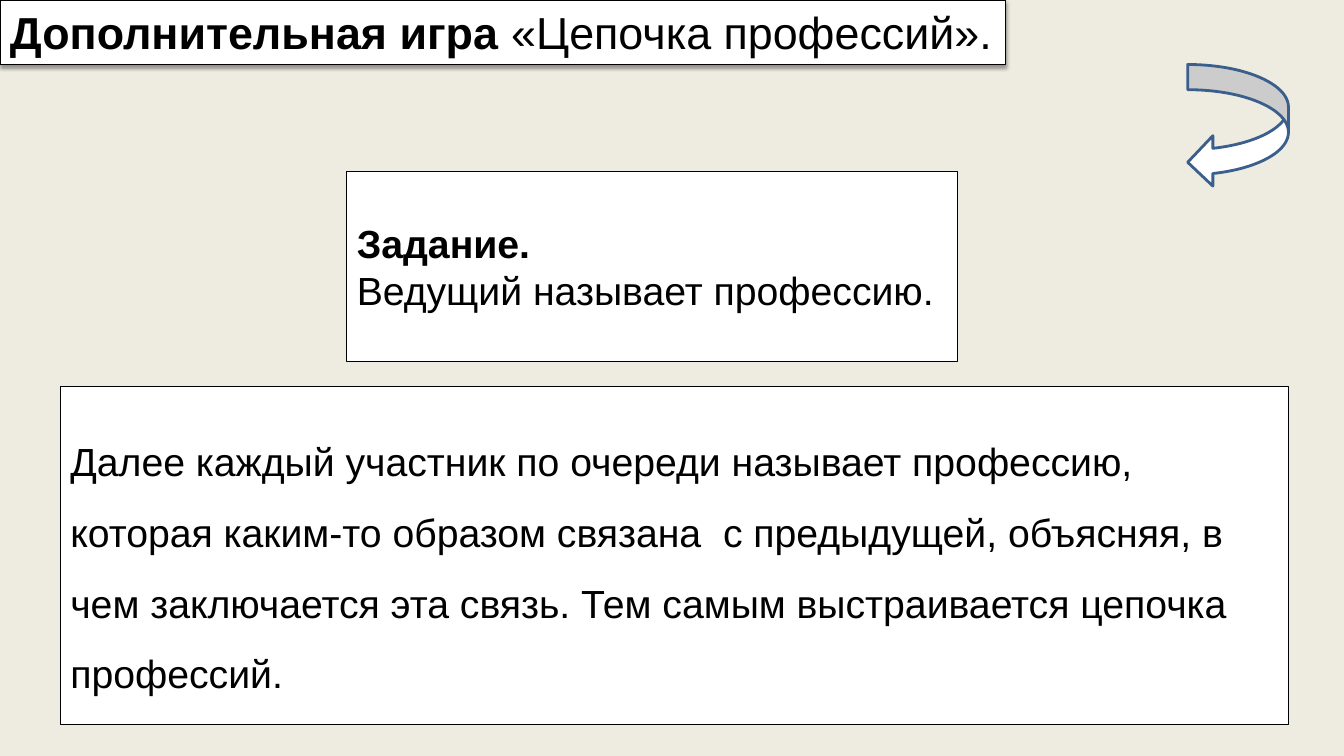
import pptx
import pptx.dml.color
import pptx.enum.shapes
import pptx.enum.text
import pptx.oxml
import pptx.oxml.ns
import pptx.util

RGBColor = pptx.dml.color.RGBColor
SHAPES = pptx.enum.shapes.MSO_SHAPE
ANCHOR = pptx.enum.text.MSO_ANCHOR

BEIGE = RGBColor(0xEE, 0xEC, 0xE1)
WHITE = RGBColor(0xFF, 0xFF, 0xFF)
BLACK = RGBColor(0x00, 0x00, 0x00)
BLUE = RGBColor(0x3A, 0x5F, 0x8C)

SHADOW = (
    f'<a:effectLst {pptx.oxml.ns.nsdecls("a")}>'
    '<a:outerShdw blurRad="39370" dist="20320" dir="5400000" rotWithShape="0">'
    '<a:srgbClr val="000000"><a:alpha val="38000"/></a:srgbClr>'
    '</a:outerShdw></a:effectLst>'
)


class GameSlide:
    font = "Arial"

    def __init__(self, deck):
        self.width, self.height = deck.slide_width, deck.slide_height
        self.page = deck.slides.add_slide(deck.slide_layouts[6])
        background = self.page.background.fill
        background.solid()
        background.fore_color.rgb = BEIGE

    def shape(self, kind, percents, line_color, line_width):
        left, top, width, height = percents
        shape = self.page.shapes.add_shape(
            kind,
            round(self.width * left / 100),
            round(self.height * top / 100),
            round(self.width * width / 100),
            round(self.height * height / 100),
        )
        shape.shadow.inherit = False
        shape.fill.solid()
        shape.fill.fore_color.rgb = WHITE
        shape.line.color.rgb = line_color
        shape.line.width = pptx.util.Pt(line_width)
        return shape

    def text_box(self, percents, paragraphs, size, anchor=ANCHOR.MIDDLE, spacing=None):
        box = self.shape(SHAPES.RECTANGLE, percents, BLACK, 0.75)
        frame = box.text_frame
        frame.word_wrap = True
        frame.vertical_anchor = anchor
        for index, spans in enumerate(paragraphs):
            para = frame.add_paragraph() if index else frame.paragraphs[0]
            para.alignment = pptx.enum.text.PP_ALIGN.LEFT
            para.line_spacing = spacing
            para.font.name = self.font
            para.font.size = pptx.util.Pt(size)
            para.font.color.rgb = BLACK
            for text, bold in spans:
                span = para.add_run()
                span.text = text
                span.font.bold = bold
        return box

    def title(self, percents, spans):
        box = self.text_box(percents, [spans], 32, ANCHOR.TOP)
        box.text_frame.auto_size = pptx.enum.text.MSO_AUTO_SIZE.SHAPE_TO_FIT_TEXT
        properties = box.element.spPr
        properties.remove(properties.find(pptx.oxml.ns.qn("a:effectLst")))
        properties.append(pptx.oxml.parse_xml(SHADOW))

    def return_arrow(self, percents):
        self.shape(SHAPES.CURVED_LEFT_ARROW, percents, BLUE, 2)


def main():
    deck = pptx.Presentation()
    deck.slide_width = pptx.util.Inches(13.33)
    deck.slide_height = pptx.util.Inches(7.5)
    slide = GameSlide(deck)
    slide.text_box(
        (25.81, 22.67, 45.46, 25.2),
        [[("Задание.", True)], [("Ведущий называет профессию.", False)]],
        28,
    )
    slide.title(
        (0, 0, 74.79, 8.53),
        [("Дополнительная игра", True), (" «Цепочка профессий».", False)],
    )
    rules = (
        "Далее каждый участник по очереди называет профессию, "
        "которая каким-то образом связана  с предыдущей, объясняя, "
        "в чем заключается эта связь. "
        "Тем самым выстраивается цепочка профессий."
    )
    slide.text_box((4.5, 51.07, 91.37, 44.8), [[(rules, False)]], 28, spacing=1.5)
    slide.return_arrow((88.37, 8.53, 7.5, 16.27))
    deck.save("out.pptx")


if __name__ == "__main__":
    main()
